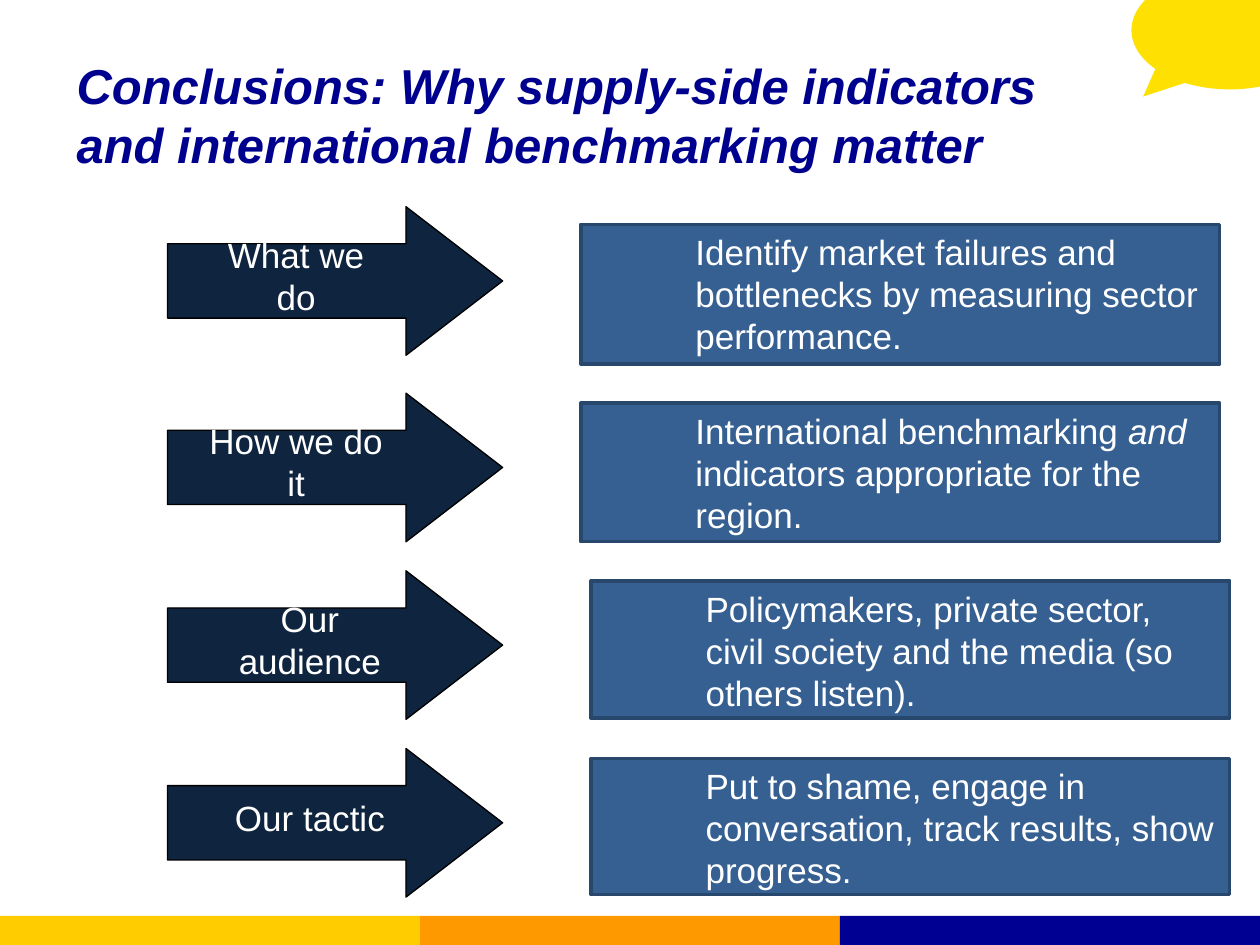
from dataclasses import dataclass

from pptx import Presentation
from pptx.dml.color import RGBColor as RGB
from pptx.enum.shapes import MSO_SHAPE as Shape
from pptx.enum.text import MSO_ANCHOR as Anchor, PP_ALIGN as Align
from pptx.util import Inches, Pt


@dataclass(frozen=True)
class Theme:
    font: str = "Arial"
    title_size: int = 28
    body_size: int = 20
    title: str = "00008F"
    text: str = "FFFFFF"
    arrow: str = "0F243E"
    arrow_line: str = "000000"
    panel: str = "366092"
    panel_line: str = "28476C"
    callout: str = "FEE002"
    stripes: tuple = ("FFCC00", "FF9900", "000092")


class SlideBuilder:
    """Draws the elements of one slide in a shared theme."""

    def __init__(self, slide, theme):
        self.slide = slide
        self.theme = theme

    def shape(self, kind, place, fill, line=None, line_width=0, adjust=()):
        shape = self.slide.shapes.add_shape(kind, *map(Inches, place))
        shape.shadow.inherit = False
        shape.fill.solid()
        shape.fill.fore_color.rgb = RGB.from_string(fill)
        if line:
            shape.line.color.rgb = RGB.from_string(line)
            shape.line.width = Pt(line_width)
        else:
            shape.line.fill.background()
        for index, value in enumerate(adjust):
            shape.adjustments[index] = value
        return shape

    def text(self, box, spans, size, color, align=Align.LEFT, anchor=Anchor.MIDDLE, wrap=True):
        frame = box.text_frame
        frame.word_wrap = wrap
        frame.vertical_anchor = anchor
        para = frame.paragraphs[0]
        para.alignment = align
        para.font.name = self.theme.font
        para.font.size = Pt(size)
        para.font.color.rgb = RGB.from_string(color)
        for words, italic in spans:
            span = para.add_run()
            span.text = words
            if italic:
                span.font.italic = True
        return para

    def title(self, words, place):
        box = self.slide.shapes.add_textbox(*map(Inches, place))
        para = self.text(box, [(words, True)], self.theme.title_size, self.theme.title)
        para.font.bold = True

    def arrow(self, words, top, label_left):
        theme = self.theme
        self.shape(Shape.RIGHT_ARROW, (1.33, top, 2.66, 1.18), theme.arrow,
                   theme.arrow_line, 0.75, (0.5, 0.65))
        label = self.slide.shapes.add_textbox(
            *map(Inches, (label_left, top + 0.39, 1.64, 0.31)))
        self.text(label, [(words, False)], theme.body_size, theme.text, Align.CENTER, wrap=False)

    def panel(self, spans, left, top, height):
        theme = self.theme
        box = self.shape(Shape.RECTANGLE, (left, top, 5.07, height), theme.panel,
                         theme.panel_line, 2)
        box.text_frame.margin_left = Inches(0.91)
        self.text(box, spans, theme.body_size, theme.text, anchor=Anchor.TOP)

    def stripes(self):
        width = 10 / len(self.theme.stripes)
        for index, color in enumerate(self.theme.stripes):
            self.shape(Shape.RECTANGLE, (index * width, 7.27, width, 0.23), color)


ROWS = [
    ("What we do", 1.64, 1.53, 4.61, 1.78, 1.11,
     [("Identify market failures and bottlenecks by measuring sector performance.", False)]),
    ("How we do it", 3.12, 1.53, 4.61, 3.2, 1.1,
     [("International benchmarking ", False), ("and ", True),
      ("indicators appropriate for the region.", False)]),
    ("Our audience", 4.53, 1.64, 4.69, 4.61, 1.09,
     [("Policymakers, private sector, civil society and the media (so others listen).", False)]),
    ("Our tactic", 5.94, 1.64, 4.69, 6.02, 1.08,
     [("Put to shame, engage in conversation, track results, show progress.", False)]),
]


def main():
    deck = Presentation()
    deck.slide_width, deck.slide_height = Inches(10), Inches(7.5)
    theme = Theme()
    page = SlideBuilder(deck.slides.add_slide(deck.slide_layouts[6]), theme)
    page.shape(Shape.OVAL_CALLOUT, (8.98, -0.23, 1.56, 0.94), theme.callout,
               adjust=(-0.44, 0.56))
    page.stripes()
    page.title("Conclusions: Why supply-side indicators and international benchmarking matter",
               (0.51, 0.28, 8.09, 1.25))
    for label, arrow_top, label_left, panel_left, panel_top, height, spans in ROWS:
        page.panel(spans, panel_left, panel_top, height)
        page.arrow(label, arrow_top, label_left)
    deck.save("out.pptx")


if __name__ == "__main__":
    main()
